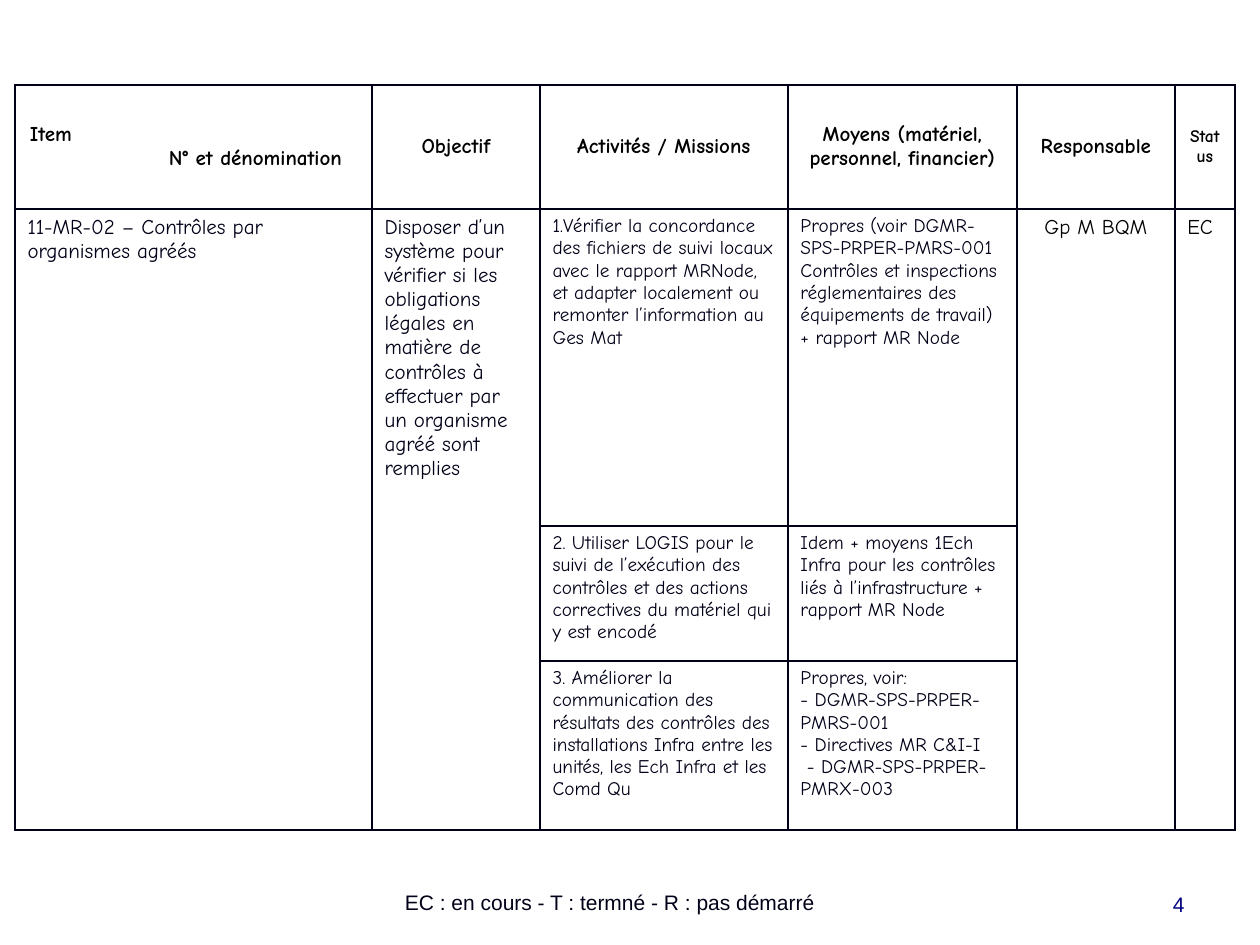
from lxml import etree
from pptx import Presentation, util as u
from pptx.dml.color import RGBColor
from pptx.enum import text
from pptx.oxml import ns

COLORS = {"ink": "000018", "black": "000000", "navy": "000080"}
LEFT, CENTER, RIGHT = text.PP_ALIGN.LEFT, text.PP_ALIGN.CENTER, text.PP_ALIGN.RIGHT
COLUMNS = [357, 168, 248, 229, 158, 60]
ROWS = [124, 317, 135, 169]
MERGED_COLUMNS = [0, 1, 4, 5]

HEADERS = [
    ["Item", "N° et dénomination"],
    ["Objectif"],
    ["Activités / Missions"],
    ["Moyens (matériel, personnel, financier)"],
    ["Responsable"],
    ["Status"],
]
OVERVIEW = {
    0: ("11-MR-02 – Contrôles par organismes agréés", LEFT, "ink"),
    1: ("Disposer d’un système pour vérifier si les obligations légales en matière de "
        "contrôles à effectuer par un organisme agréé sont remplies", LEFT, "ink"),
    4: ("Gp M BQM", CENTER, "black"),
    5: ("EC", LEFT, "black"),
}
ACTIVITIES = [
    (["1.Vérifier la concordance des fichiers de suivi locaux avec le rapport MRNode, "
      "et adapter localement ou remonter l’information au Ges Mat"],
     ["Propres (voir DGMR-SPS-PRPER-PMRS-001 Contrôles et inspections réglementaires "
      "des équipements de travail)",
      "+ rapport MR Node"]),
    (["2. Utiliser LOGIS pour le suivi de l’exécution des contrôles et des actions "
      "correctives du matériel qui y est encodé"],
     ["Idem + moyens 1Ech Infra pour les contrôles liés à l’infrastructure + rapport MR Node"]),
    (["3. Améliorer la communication des résultats des contrôles des installations Infra "
      "entre les unités, les Ech Infra et les Comd Qu"],
     ["Propres, voir:",
      "- DGMR-SPS-PRPER-PMRS-001",
      "- Directives MR C&I-I",
      " - DGMR-SPS-PRPER-PMRX-003"]),
]


def px(length):
    return u.Emu(round(length * 914400 / 126))


def write(frame, lines, size, color, align=LEFT, bold=False, font="Comic Neue"):
    frame.text = "\n".join(lines)
    for paragraph in frame.paragraphs:
        paragraph.alignment = align
        paragraph.font.name = font
        paragraph.font.size = u.Pt(size)
        paragraph.font.bold = bold
        paragraph.font.color.rgb = RGBColor.from_string(COLORS[color])


def outline(cell):
    properties = cell._tc.get_or_add_tcPr()
    for position, side in enumerate(["lnL", "lnR", "lnT", "lnB"]):
        line = etree.Element(ns.qn(f"a:{side}"), w=str(u.Pt(1)))
        fill = etree.SubElement(line, ns.qn("a:solidFill"))
        etree.SubElement(fill, ns.qn("a:srgbClr"), val=COLORS["ink"])
        properties.insert(position, line)


def add_header(table):
    for column, lines in enumerate(HEADERS):
        cell = table.cell(0, column)
        cell.vertical_anchor = text.MSO_ANCHOR.MIDDLE
        size = 10 if column == len(HEADERS) - 1 else 12
        write(cell.text_frame, lines, size, "black", CENTER, bold=True)
    item = table.cell(0, 0)
    item.margin_left, item.margin_right = px(15), px(30)
    for paragraph, align in zip(item.text_frame.paragraphs, [LEFT, RIGHT]):
        paragraph.alignment = align
    table.cell(0, len(HEADERS) - 1)._tc.get_or_add_tcPr().set("vert", "eaVert")


def add_plan(slide, left, top):
    frame = slide.shapes.add_table(len(ROWS), len(COLUMNS), px(left), px(top),
                                   px(sum(COLUMNS)), px(sum(ROWS)))
    table = frame.table
    table.first_row = table.horz_banding = False
    for column, width in zip(table.columns, COLUMNS):
        column.width = px(width)
    for row, height in zip(table.rows, ROWS):
        row.height = px(height)
    for cell in table.iter_cells():
        cell.fill.background()
        outline(cell)
    add_header(table)
    for column in MERGED_COLUMNS:
        table.cell(1, column).merge(table.cell(len(ROWS) - 1, column))
        wording, align, color = OVERVIEW[column]
        write(table.cell(1, column).text_frame, [wording], 12, color, align)
    for row, activity in enumerate(ACTIVITIES, 1):
        for column, lines in enumerate(activity, 2):
            write(table.cell(row, column).text_frame, lines, 11, "ink")


def add_footer(slide, left, top, width, wording, color, align):
    frame = slide.shapes.add_textbox(px(left), px(top), px(width), px(63)).text_frame
    frame.word_wrap = True
    frame.vertical_anchor = text.MSO_ANCHOR.BOTTOM
    write(frame, [wording], 12, color, align, font="Arial")


def main():
    presentation = Presentation()
    presentation.slide_width, presentation.slide_height = px(1260), px(945)
    slide = presentation.slides.add_slide(presentation.slide_layouts[6])
    add_plan(slide, 15, 85)
    add_footer(slide, 263, 858, 694, "EC : en cours - T : termné - R : pas démarré", "ink", CENTER)
    add_footer(slide, 903, 860, 294, "4", "navy", RIGHT)
    presentation.save("out.pptx")


if __name__ == "__main__":
    main()
